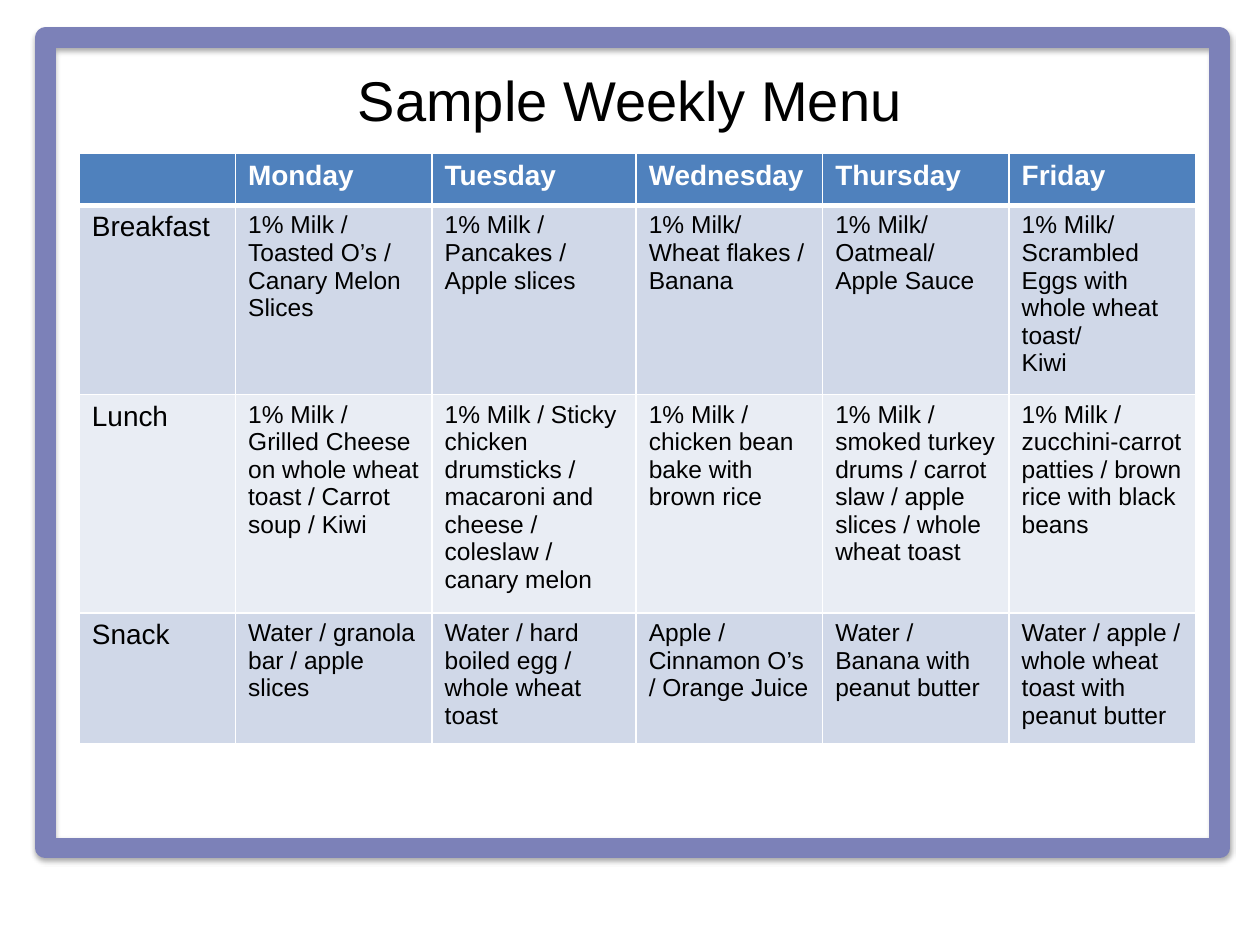
from dataclasses import dataclass

from lxml.etree import SubElement
from pptx import Presentation
from pptx.dml.color import RGBColor
from pptx.enum.shapes import MSO_SHAPE
from pptx.enum.text import MSO_ANCHOR, PP_ALIGN
from pptx.oxml import parse_xml
from pptx.oxml.ns import nsdecls, qn
from pptx.util import Inches, Pt


@dataclass(frozen=True)
class Theme:
    font: str = "Arial"
    title_size: int = 32
    label_size: int = 16
    body_size: int = 14
    black: str = "000000"
    white: str = "FFFFFF"
    frame: str = "7C81B8"
    header: str = "4F81BD"
    bands: tuple = ("D0D8E8", "E9EDF4")


theme = Theme()


def write(text_frame, text, size=theme.body_size, color=theme.black,
          bold=False, align=PP_ALIGN.LEFT):
    """Fill a text frame, one paragraph for each line of the text."""
    text_frame.text = text
    text_frame.word_wrap = True
    for paragraph in text_frame.paragraphs:
        paragraph.alignment = align
        font = paragraph.font
        for run in paragraph.runs:
            font = run.font
            font.name = theme.font
            font.size = Pt(size)
            font.bold = bold
            font.color.rgb = RGBColor.from_string(color)


def set_borders(cell, **widths):
    """Draw white borders; call before the fill, which must follow them in XML."""
    properties = cell._tc.get_or_add_tcPr()
    for side in "LRTB":
        line = SubElement(properties, qn(f"a:ln{side}"), w=str(Pt(widths.get(side, 1))))
        fill = SubElement(line, qn("a:solidFill"))
        SubElement(fill, qn("a:srgbClr"), val=theme.white)


presentation = Presentation()
presentation.slide_width = Inches(10)
presentation.slide_height = Inches(7.5)
slide = presentation.slides.add_slide(presentation.slide_layouts[6])

# Frame
frame = slide.shapes.add_shape(
    MSO_SHAPE.RECTANGLE, Inches(0.36), Inches(0.3), Inches(9.32), Inches(6.43))
frame.fill.background()
frame.line.color.rgb = RGBColor.from_string(theme.frame)
frame.line.width = Pt(11.75)
frame._element.spPr.append(parse_xml(
    f'<a:effectLst {nsdecls("a")}>'
    f'<a:outerShdw blurRad="{Pt(3.1)}" dist="{Pt(1.8)}" dir="5400000" rotWithShape="0">'
    f'<a:srgbClr val="{theme.black}"><a:alpha val="35000"/></a:srgbClr>'
    '</a:outerShdw></a:effectLst>'))

# Title
title = slide.shapes.add_textbox(Inches(0.5), Inches(0.47), Inches(9), Inches(0.64))
title.text_frame.vertical_anchor = MSO_ANCHOR.MIDDLE
write(title.text_frame, "Sample Weekly Menu", size=theme.title_size, align=PP_ALIGN.CENTER)

# Menu table
menu = [
    ["", "Monday", "Tuesday", "Wednesday", "Thursday", "Friday"],
    ["Breakfast",
     "1% Milk / Toasted O’s /\nCanary Melon Slices",
     "1% Milk / Pancakes / Apple slices",
     "1% Milk/ Wheat flakes /\nBanana",
     "1% Milk/\nOatmeal/\nApple Sauce",
     "1% Milk/\nScrambled Eggs with whole wheat toast/\nKiwi"],
    ["Lunch",
     "1% Milk / Grilled Cheese on whole wheat toast / Carrot soup / Kiwi",
     "1% Milk / Sticky chicken drumsticks / macaroni and cheese / coleslaw / canary melon",
     "1% Milk / chicken bean bake with brown rice",
     "1% Milk / smoked turkey drums / carrot slaw / apple slices / whole wheat toast",
     "1% Milk / zucchini-carrot patties / brown rice with black beans"],
    ["Snack",
     "Water / granola bar / apple slices",
     "Water / hard boiled egg / whole wheat toast",
     "Apple / Cinnamon O’s / Orange Juice",
     "Water / Banana with peanut butter",
     "Water / apple / whole wheat toast with peanut butter"],
]
column_widths = [1.24, 1.56, 1.62, 1.48, 1.48, 1.48]
row_heights = [0.41, 1.41, 1.63, 0.97]

table = slide.shapes.add_table(
    len(row_heights), len(column_widths), Inches(0.63), Inches(1.22),
    Inches(sum(column_widths)), Inches(sum(row_heights))).table
for column, width in zip(table.columns, column_widths):
    column.width = Inches(width)
for row, height in zip(table.rows, row_heights):
    row.height = Inches(height)

for row_index, entries in enumerate(menu):
    is_header = row_index == 0
    band = theme.header if is_header else theme.bands[(row_index - 1) % 2]
    for column_index, entry in enumerate(entries):
        cell = table.cell(row_index, column_index)
        is_label = is_header or column_index == 0
        write(cell.text_frame, entry,
              size=theme.label_size if is_label else theme.body_size,
              color=theme.white if is_header else theme.black, bold=is_header)
        set_borders(cell, B=3 if is_header else 1, T=3 if row_index == 1 else 1)
        cell.fill.solid()
        cell.fill.fore_color.rgb = RGBColor.from_string(band)

presentation.save("out.pptx")
